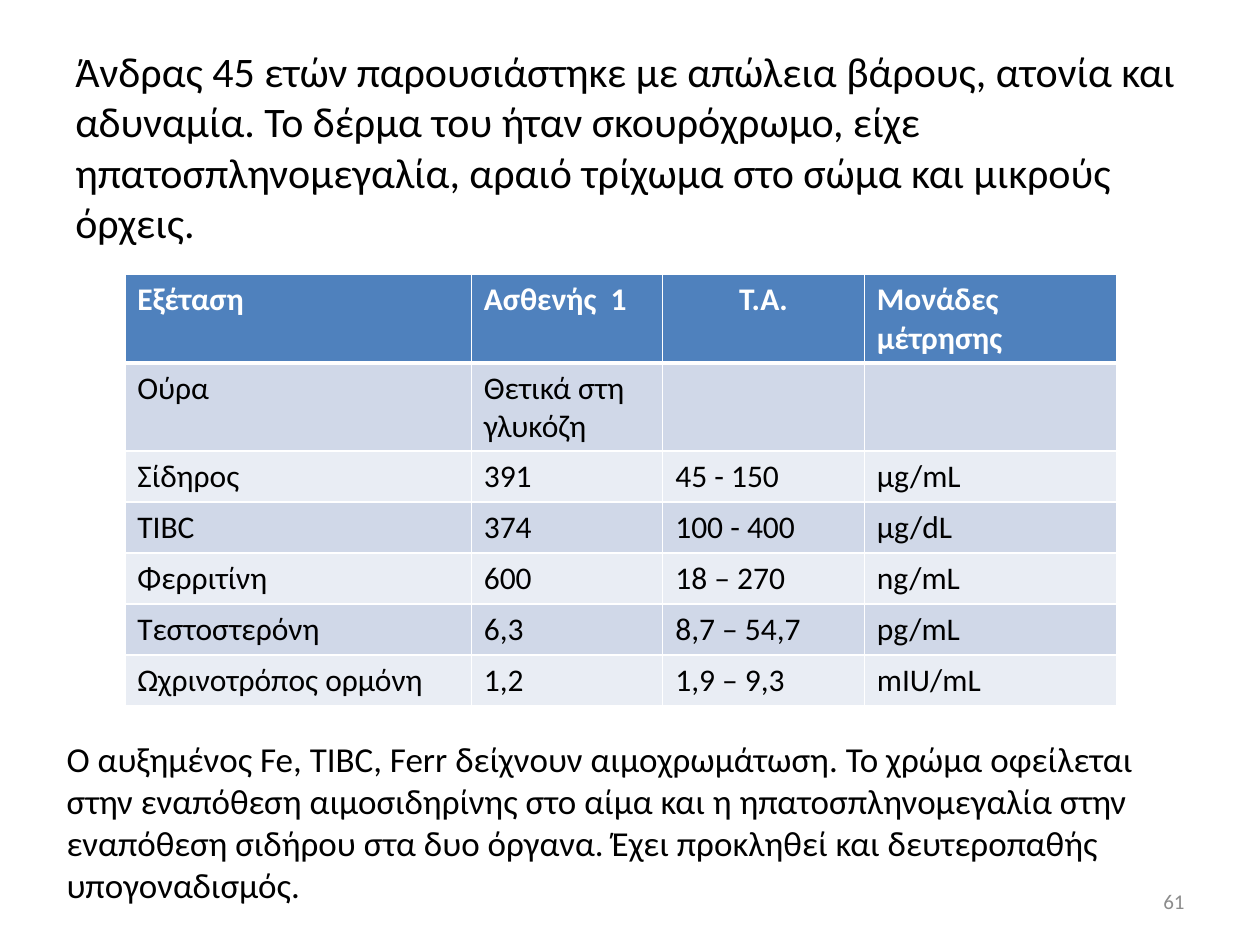
from lxml import etree
from pptx import Presentation
from pptx.dml.color import RGBColor
from pptx.enum.text import MSO_ANCHOR, PP_ALIGN
from pptx.oxml.ns import qn
from pptx.util import Inches, Pt

TOP, MIDDLE = MSO_ANCHOR.TOP, MSO_ANCHOR.MIDDLE
LEFT, CENTER, RIGHT = PP_ALIGN.LEFT, PP_ALIGN.CENTER, PP_ALIGN.RIGHT

BLACK = RGBColor(0x00, 0x00, 0x00)
WHITE = RGBColor(0xFF, 0xFF, 0xFF)
GREY = RGBColor(0x8C, 0x8C, 0x8C)
HEADER_BLUE = RGBColor(0x4F, 0x81, 0xBD)
BAND_DARK = RGBColor(0xD0, 0xD8, 0xE8)
BAND_LIGHT = RGBColor(0xE9, 0xED, 0xF4)


def write(frame, text, size, color, align=LEFT, bold=False):
    frame.text = text
    paragraph = frame.paragraphs[0]
    paragraph.alignment = align
    font = paragraph.runs[0].font if paragraph.runs else paragraph.font
    font.name, font.size, font.bold = "Calibri", Pt(size), bold
    font.color.rgb = color


def set_borders(cell, bottom_width):
    # Border lines come before the fill in the cell properties
    properties = cell._tc.get_or_add_tcPr()
    widths = {"a:lnL": 1, "a:lnR": 1, "a:lnT": 1, "a:lnB": bottom_width}
    for position, (side, width) in enumerate(widths.items()):
        line = etree.Element(qn(side), w=str(Pt(width)))
        fill = etree.SubElement(line, qn("a:solidFill"))
        etree.SubElement(fill, qn("a:srgbClr"), val=str(WHITE))
        properties.insert(position, line)


prs = Presentation()
prs.slide_width, prs.slide_height = Inches(10), Inches(7.5)
slide = prs.slides.add_slide(prs.slide_layouts[6])

# Case description, conclusion and slide number
case = ("Άνδρας 45 ετών παρουσιάστηκε με απώλεια βάρους, ατονία και αδυναμία. "
        "Το δέρμα του ήταν σκουρόχρωμο, είχε ηπατοσπληνομεγαλία, αραιό τρίχωμα "
        "στο σώμα και μικρούς όρχεις.")
conclusion = ("O αυξημένος Fe, TIBC, Ferr δείχνουν αιμοχρωμάτωση. Το χρώμα "
              "οφείλεται στην εναπόθεση αιμοσιδηρίνης στο αίμα και η "
              "ηπατοσπληνομεγαλία στην εναπόθεση σιδήρου στα δυο όργανα. "
              "Έχει προκληθεί και δευτεροπαθής υπογοναδισμός.")
texts = [
    (case, (0.5, 0.3, 9, 1.72), 24, BLACK, LEFT, MIDDLE),
    (conclusion, (0.43, 5.8, 9.06, 1.45), 20, BLACK, LEFT, TOP),
    ("61", (7.17, 6.95, 2.33, 0.4), 12, GREY, RIGHT, MIDDLE),
]
for text, place, size, color, align, anchor in texts:
    frame = slide.shapes.add_textbox(*map(Inches, place)).text_frame
    frame.word_wrap = True
    frame.vertical_anchor = anchor
    write(frame, text, size, color, align)

# Laboratory results
results = [
    ("Εξέταση", "Ασθενής  1", "Τ.Α.", "Μονάδες μέτρησης"),
    ("Ούρα", "Θετικά στη γλυκόζη", "", ""),
    ("Σίδηρος", "391", "45 - 150", "μg/mL"),
    ("TIBC", "374", "100 - 400", "μg/dL"),
    ("Φερριτίνη", "600", "18 – 270", "ng/mL"),
    ("Τεστοστερόνη", "6,3", "8,7 – 54,7", "pg/mL"),
    ("Ωχρινοτρόπος ορμόνη", "1,2", "1,9 – 9,3", "mIU/mL"),
]
column_widths = [2.75, 1.52, 1.6, 2]
row_height = 0.405
lab_table = slide.shapes.add_table(
    len(results), len(column_widths), Inches(0.99), Inches(2.18),
    Inches(sum(column_widths)), Inches(row_height * len(results))).table
for column, width in zip(lab_table.columns, column_widths):
    column.width = Inches(width)

for r, result in enumerate(results):
    header = r == 0
    # Rows with wrapped text are taller
    lab_table.rows[r].height = Inches(0.7 if r < 2 else row_height)
    band = HEADER_BLUE if header else BAND_DARK if r % 2 else BAND_LIGHT
    for c, value in enumerate(result):
        cell = lab_table.cell(r, c)
        cell.fill.solid()
        cell.fill.fore_color.rgb = band
        set_borders(cell, 3 if header else 1)
        write(cell.text_frame, value, 18, WHITE if header else BLACK,
              CENTER if header and c == 2 else LEFT, header)

prs.save("out.pptx")
